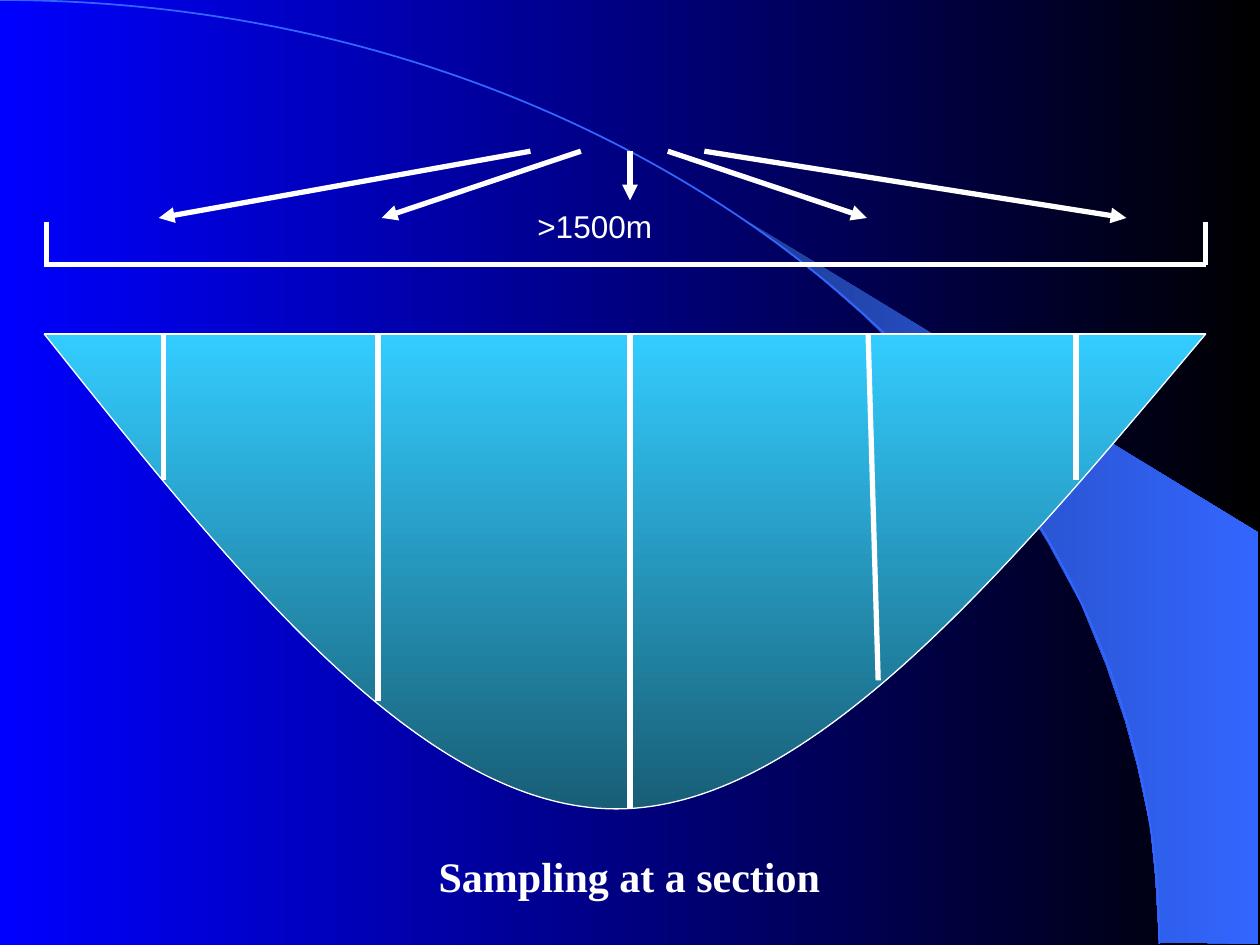
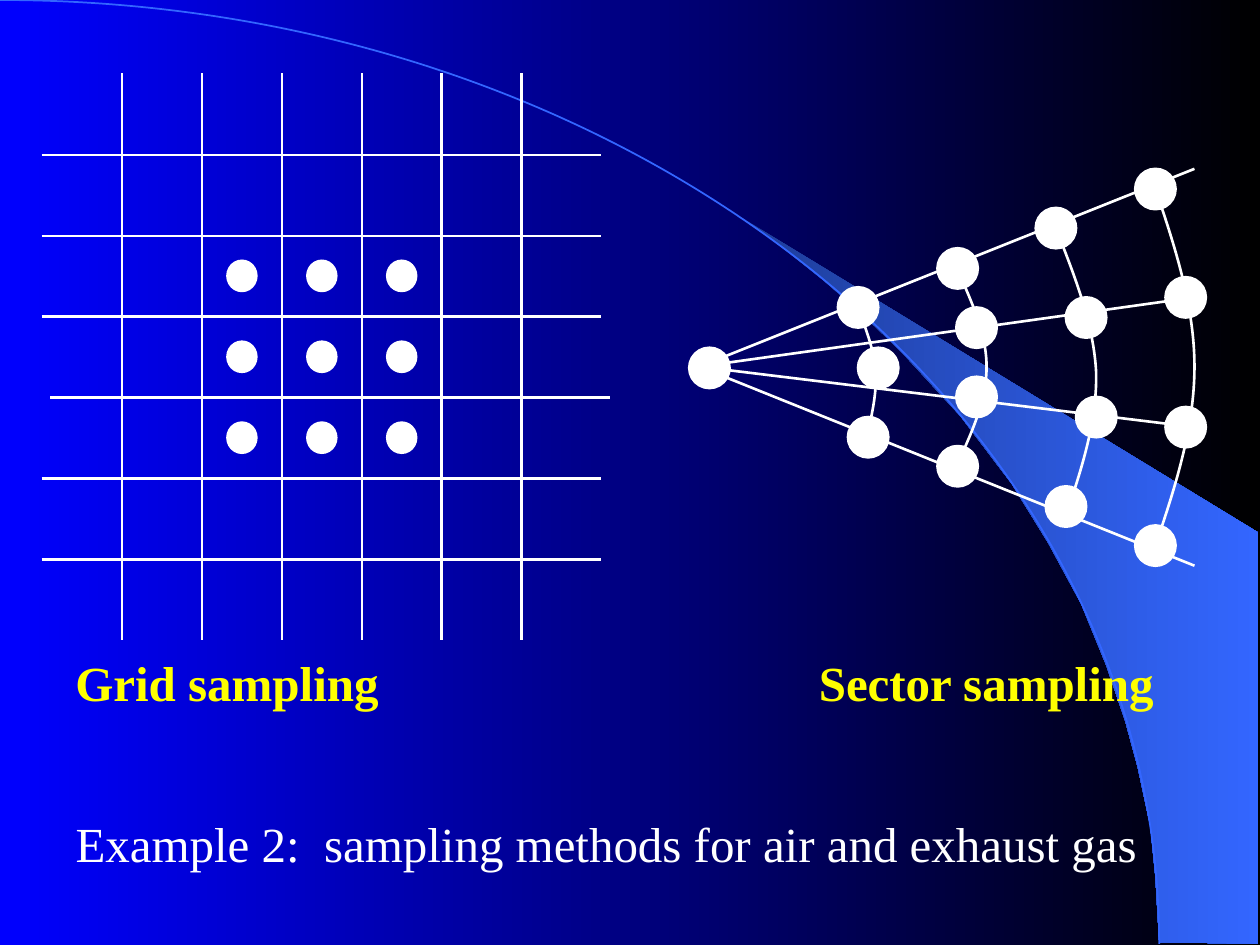
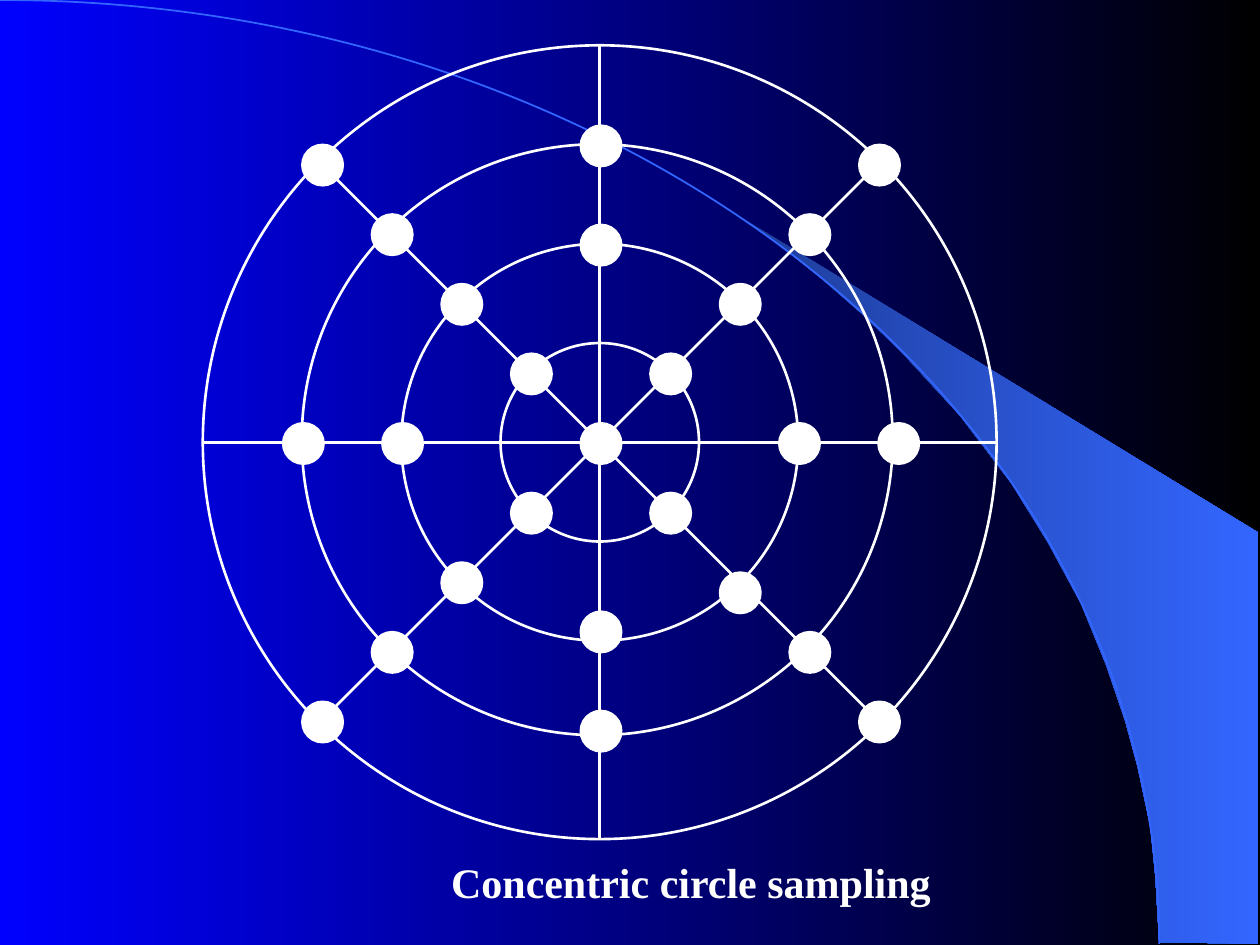
from lxml.etree import SubElement
from pptx import Presentation
from pptx.dml.color import RGBColor
from pptx.enum.shapes import MSO_CONNECTOR, MSO_SHAPE
from pptx.enum.text import MSO_ANCHOR, MSO_AUTO_SIZE, PP_ALIGN
from pptx.oxml.ns import qn
from pptx.util import Inches, Pt

WHITE, YELLOW, BLUE, BLACK = "FFFFFF", "FFFF00", "0000FF", "000000"
BAND_DARK, BAND_LIGHT = "1E3D99", "3366FF"
WATER_TOP, WATER_BOTTOM = "33CCFF", "185E76"
SERIF, SANS = "Times New Roman", "Arial"
TITLE_ONLY = 5


# --- formatting helpers ---
def rgb(color):
    return RGBColor.from_string(color)


def gradient(fill, first, last, angle=0):
    fill.gradient()
    fill.gradient_angle = angle
    for stop, color in zip(fill.gradient_stops, (first, last)):
        stop.color.rgb = rgb(color)


def stroke(shape, color=WHITE, width=1.5):
    shape.line.color.rgb = rgb(color)
    shape.line.width = Pt(width)


def write(shape, text, size=24, color=WHITE, font=SERIF, bold=False,
          align=PP_ALIGN.LEFT, tab=None):
    tf = shape.text_frame
    tf.word_wrap = True
    tf.auto_size = MSO_AUTO_SIZE.NONE
    tf.vertical_anchor = MSO_ANCHOR.TOP
    p = tf.paragraphs[0]
    p.alignment = align
    if tab:
        tabs = SubElement(p._p.get_or_add_pPr(), qn("a:tabLst"))
        SubElement(tabs, qn("a:tab"), pos=str(Inches(tab)), algn="l")
    r = p.add_run()
    r.text = text
    r.font.name = font
    r.font.size = Pt(size)
    r.font.bold = bold
    r.font.color.rgb = rgb(color)


# --- elements ---
def add_text(s, box, text, **fmt):
    write(s.shapes.add_textbox(*map(Inches, box)), text, **fmt)


def add_slide(prs, title, box, **fmt):
    s = prs.slides.add_slide(prs.slide_layouts[TITLE_ONLY])
    t = s.shapes.title
    t.left, t.top, t.width, t.height = map(Inches, box)
    write(t, title, **fmt)
    return s


def add_line(s, x1, y1, x2, y2, width=1.5, arrow=False):
    c = s.shapes.add_connector(MSO_CONNECTOR.STRAIGHT,
                               *map(Inches, (x1, y1, x2, y2)))
    stroke(c, width=width)
    sp_pr = c.element.spPr
    if arrow:
        SubElement(sp_pr.find(qn("a:ln")), qn("a:tailEnd"), type="triangle")
    SubElement(sp_pr, qn("a:effectLst"))


def add_ellipse(s, cx, cy, width, height):
    sp = s.shapes.add_shape(
        MSO_SHAPE.OVAL, Inches(cx - width / 2), Inches(cy - height / 2),
        Inches(width), Inches(height))
    sp.shadow.inherit = False
    return sp


def add_dot(s, cx, cy, width=0.32, height=0.32, outlined=True):
    sp = add_ellipse(s, cx, cy, width, height)
    sp.fill.solid()
    sp.fill.fore_color.rgb = rgb(WHITE)
    if outlined:
        stroke(sp)
    else:
        sp.line.fill.background()


def add_ring(s, cx, cy, radius):
    sp = add_ellipse(s, cx, cy, 2 * radius, 2 * radius)
    sp.fill.background()
    stroke(sp)


def add_outline(s, points, close=False):
    pts = [(Inches(x), Inches(y)) for x, y in points]
    builder = s.shapes.build_freeform(*pts[0])
    builder.add_line_segments(pts[1:], close=close)
    sp = builder.convert_to_shape()
    sp.shadow.inherit = False
    sp.fill.background()
    return sp


def add_curve(s, points):
    """Joined cubic curves: a start, then two handles and an end for each."""
    sp = add_outline(s, points)
    segments = list(sp.element.iter(qn("a:lnTo")))
    outline = segments[0].getparent()
    for i in range(0, len(segments), 3):
        cubic = SubElement(outline, qn("a:cubicBezTo"))
        for segment in segments[i:i + 3]:
            cubic.append(segment[0])
            outline.remove(segment)
    return sp


# --- shared backdrop, kept on the slide master ---
def add_backdrop(prs, s):
    master = prs.slide_master
    gradient(master.background.fill, BLUE, BLACK)
    band = add_outline(s, [
        (9.2, 7.48), (9.99, 7.49), (9.99, 4.23), (5.89, 1.73), (6.24, 1.99),
        (6.53, 2.22), (6.85, 2.5), (7.16, 2.8), (7.62, 3.3), (8.03, 3.84),
        (8.32, 4.31), (8.58, 4.79), (8.78, 5.28), (8.93, 5.72), (9.03, 6.09),
        (9.13, 6.56), (9.17, 6.96)], close=True)
    gradient(band.fill, BAND_DARK, BAND_LIGHT)
    band.line.fill.background()
    arc = add_curve(s, [(0, 0), (5.08, 0), (9.2, 3.35), (9.2, 7.49)])
    stroke(arc, BAND_LIGHT, 1)
    for number, sp in enumerate((band, arc), 101):
        sp.element.nvSpPr.cNvPr.set("id", str(number))
        master.shapes.element.append(sp.element)


# --- slides ---
def section_slide(prs):
    s = add_slide(prs, "Sampling at a section", (2.82, 6.7, 4.35, 0.5),
                  bold=True, align=PP_ALIGN.CENTER)
    add_backdrop(prs, s)

    # River bed and water surface
    left, right, surface = 0.35, 9.57, 2.65
    water = add_curve(s, [
        (left, surface), (1.85, 4.53), (3.35, 6.42), (4.89, 6.42),
        (6.42, 6.42), (7.99, 4.53), (right, surface)])
    gradient(water.fill, WATER_TOP, WATER_BOTTOM, angle=270)
    stroke(water, width=0.75)
    add_line(s, left, surface, right, surface, width=0.75)

    # Width bracket
    add_line(s, left, 2.1, right, 2.1, width=3)
    for x in (0.37, right):
        add_line(s, x, 1.76, x, 2.1, width=3)
    add_text(s, (3.48, 1.59, 2.48, 0.4), ">1500m", size=18, font=SANS,
             align=PP_ALIGN.CENTER)

    # Sampling verticals
    for x1, x2, depth in ((5, 5, 6.42), (1.3, 1.3, 3.81), (3, 3, 5.56),
                          (8.54, 8.54, 3.81), (6.89, 6.97, 5.4)):
        add_line(s, x1, surface, x2, depth, width=3)

    # Arrows towards the verticals
    for x1, x2, y2 in ((4.21, 1.26, 1.73), (4.61, 3.03, 1.73), (5, 5, 1.59),
                       (5.3, 6.88, 1.73), (5.59, 8.94, 1.73)):
        add_line(s, x1, 1.2, x2, y2, width=3, arrow=True)


def draw_grid(s):
    first_x, first_y = 0.97, 1.23
    step_x, step_y = (4.14 - first_x) / 5, (4.44 - first_y) / 5
    for i in range(6):
        y = first_y + i * step_y
        left = 0.4 if i == 3 else 0.33
        add_line(s, left, y, left + 4.44, y)
    for i in range(6):
        x = first_x + i * step_x
        add_line(s, x, 0.58, x, 5.08)
    for row in range(3):
        for col in range(3):
            add_dot(s, 1.92 + col * step_x, 2.19 + row * step_y,
                    0.25, 0.26, outlined=False)


def draw_sector(s):
    for y in (4.49, 3.39, 2.36, 1.34):
        add_line(s, 5.55, 2.91, 9.48, y)
    arcs = (
        [(9.17, 1.5), (9.33, 1.97), (9.48, 2.44), (9.48, 2.91),
         (9.48, 3.39), (9.33, 3.86), (9.17, 4.33)],
        [(8.38, 1.81), (8.53, 2.19), (8.68, 2.57), (8.7, 2.95),
         (8.71, 3.33), (8.59, 3.71), (8.46, 4.09)],
        [(7.59, 2.12), (7.71, 2.39), (7.83, 2.65), (7.83, 2.91),
         (7.83, 3.18), (7.71, 3.44), (7.59, 3.7)],
        [(6.81, 2.44), (6.87, 2.61), (6.94, 2.78), (6.95, 2.95),
         (6.96, 3.12), (6.92, 3.29), (6.88, 3.47)])
    for arc in arcs:
        stroke(add_curve(s, arc))
    dots = (
        (6.81, 2.44), (6.97, 2.92), (6.89, 3.47),
        (7.6, 2.13), (7.75, 2.6), (7.75, 3.15), (7.6, 3.7),
        (8.38, 1.81), (8.62, 2.52), (8.7, 3.31), (8.46, 4.02),
        (9.17, 1.5), (9.41, 2.36), (9.41, 3.39), (9.17, 4.33),
        (5.63, 2.92))
    for x, y in dots:
        add_dot(s, x, y)


def grid_and_sector_slide(prs):
    s = add_slide(prs, "Example 2:  sampling methods for air and exhaust gas",
                  (0.5, 6.41, 9.25, 0.57), size=28)
    draw_grid(s)
    draw_sector(s)
    add_text(s, (0.5, 5.13, 9.25, 0.57), "Grid sampling\tSector sampling",
             size=28, color=YELLOW, bold=True, tab=5.9)


def circle_slide(prs):
    s = add_slide(prs, "Concentric circle sampling", (3.48, 6.75, 4.13, 0.5),
                  bold=True)
    cx, cy, radius, diagonal = 4.76, 3.51, 3.15, 2.21

    # Rings and spokes; the third ring is slightly smaller and off centre
    for ring in (1, 2, 4):
        add_ring(s, cx, cy, radius * ring / 4)
    add_ring(s, cx - 0.02, cy - 0.02, 4.69 / 2)
    for dx, dy in ((radius, 0), (0, radius), (diagonal, -diagonal),
                   (diagonal, diagonal)):
        add_line(s, cx - dx, cy - dy, cx + dx, cy + dy)

    # Sampling points: centre, diagonals on every ring, axes on rings 2 and 3
    dot_x, dot_y = 4.77, 3.52
    add_dot(s, dot_x, dot_y)
    for ring in range(1, 5):
        d = diagonal * ring / 4
        for sx in (-1, 1):
            for sy in (-1, 1):
                nudge = 0.08 if (ring, sx, sy) == (2, 1, 1) else 0
                add_dot(s, dot_x + sx * d, dot_y + sy * d + nudge)
    for ring in (2, 3):
        d = radius * ring / 4
        for dx, dy in ((-d, 0), (d, 0), (0, -d), (0, d - 0.08)):
            add_dot(s, dot_x + dx, dot_y + dy)


def main():
    prs = Presentation()
    prs.slide_width, prs.slide_height = Inches(10), Inches(7.5)
    section_slide(prs)
    grid_and_sector_slide(prs)
    circle_slide(prs)
    prs.save("out.pptx")


if __name__ == "__main__":
    main()
